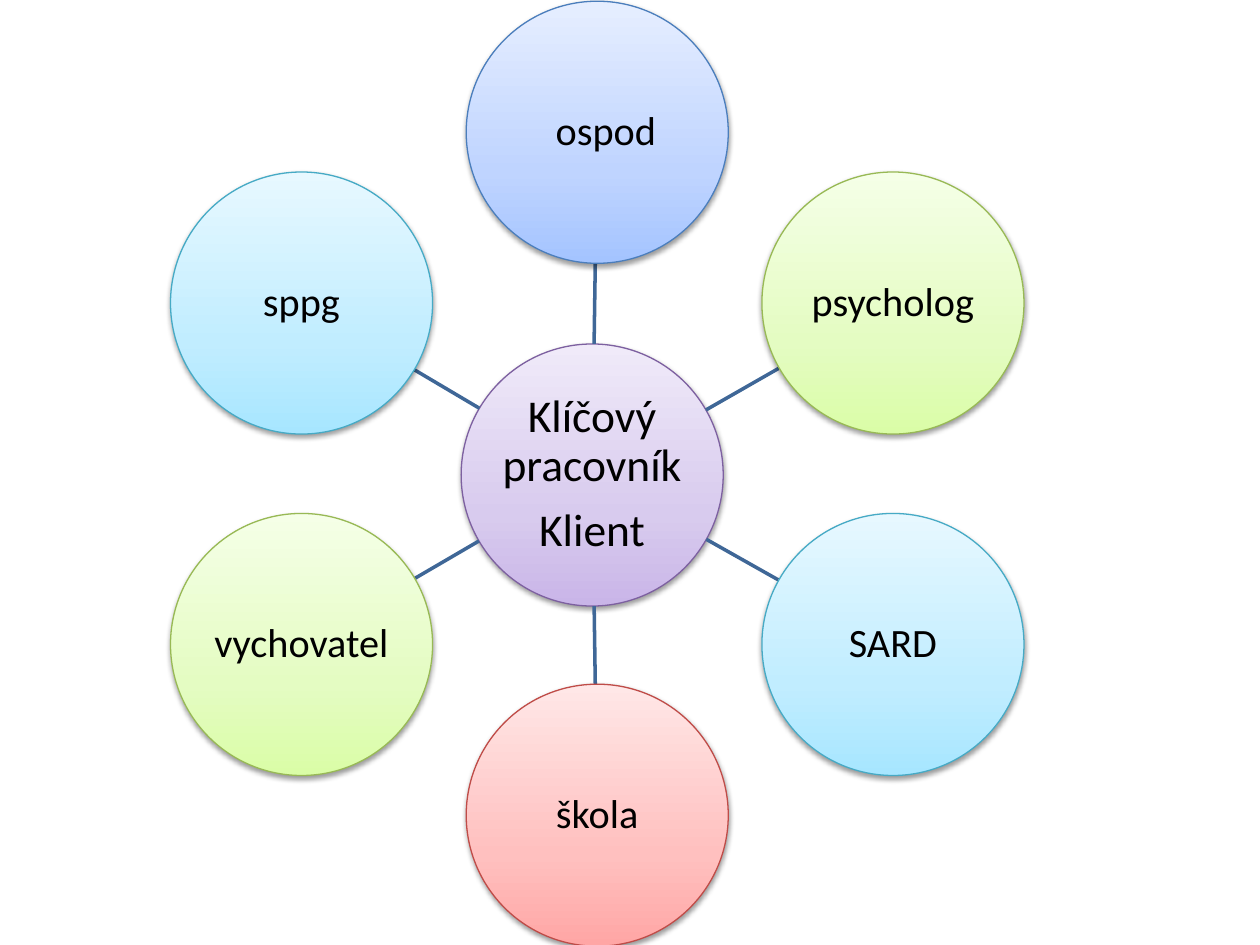
"""Build a hub-and-spoke slide of the people around a key worker and client."""
from copy import deepcopy
from math import cos, hypot, radians, sin

from lxml import etree
from pptx import Presentation
from pptx.dml.color import RGBColor
from pptx.enum.shapes import MSO_CONNECTOR, MSO_SHAPE
from pptx.enum.text import MSO_ANCHOR, PP_ALIGN
from pptx.oxml import parse_xml
from pptx.oxml.ns import qn
from pptx.util import Inches, Pt

BLACK = RGBColor(0x00, 0x00, 0x00)
SPOKE = RGBColor(0x3F, 0x67, 0x97)
PURPLE = [RGBColor.from_string(c) for c in ("C9B5E8", "D8CBEE", "F0EAF9", "7D60A0")]
BLUE = [RGBColor.from_string(c) for c in ("A4C4FF", "BFD4FF", "E6EEFF", "4B7EBC")]
GREEN = [RGBColor.from_string(c) for c in ("DAFDA7", "E4FCC2", "F5FFE7", "98B955")]
AQUA = [RGBColor.from_string(c) for c in ("A7E6FF", "C1EDFF", "E7F8FF", "46AAC5")]
RED = [RGBColor.from_string(c) for c in ("FFA6A5", "FFC0BF", "FFE7E7", "BF4C48")]

RADIUS = 1.04
HUB_X, HUB_Y = 4.70, 3.77
RING_X, RING_Y, RING_RADIUS = 4.74, 3.76, 2.71
SHADOW = (
    '<a:effectLst xmlns:a="http://schemas.openxmlformats.org/drawingml/2006/main">'
    '<a:outerShdw blurRad="39370" dist="20320" dir="5400000" rotWithShape="0">'
    '<a:srgbClr val="000000"><a:alpha val="38000"/></a:srgbClr>'
    '</a:outerShdw></a:effectLst>'
)

deck = Presentation()
deck.slide_width, deck.slide_height = Inches(10), Inches(7.5)
page = deck.slides.add_slide(deck.slide_layouts[6])


def add_circle(text, *, x, y, palette, size=23, left_inset=0.02):
    circle = page.shapes.add_shape(
        MSO_SHAPE.OVAL, Inches(x - RADIUS), Inches(y - RADIUS),
        Inches(2 * RADIUS), Inches(2 * RADIUS))
    circle.fill.gradient()
    circle.fill.gradient_angle = 90
    first_stop = circle.fill._fill._gradFill.find(qn("a:gsLst"))[0]
    first_stop.addnext(deepcopy(first_stop))
    for stop, position, color in zip(circle.fill.gradient_stops, (0, 0.35, 1), palette):
        stop.position = position
        stop.color.rgb = color
    circle.line.color.rgb = palette[3]
    circle.line.width = Pt(0.75)
    circle._element.spPr.append(parse_xml(SHADOW))

    frame = circle.text_frame
    frame.word_wrap = True
    frame.vertical_anchor = MSO_ANCHOR.MIDDLE
    frame.margin_left = Inches(left_inset)
    frame.margin_right = frame.margin_top = frame.margin_bottom = Inches(0.02)
    frame.text = text
    for para in frame.paragraphs:
        para.alignment = PP_ALIGN.CENTER
        para.line_spacing = 0.9
        para.space_after = Pt(9)
        for span in para.runs:
            span.font.name = "Calibri"
            span.font.size = Pt(size)
            span.font.color.rgb = BLACK


add_circle("Klíčový pracovník\nKlient", x=HUB_X, y=HUB_Y, palette=PURPLE, size=26)

partners = [
    ("ospod", BLUE, 0.16),
    ("psycholog", GREEN, 0.02),
    ("SARD", AQUA, 0.02),
    ("škola", RED, 0.02),
    ("vychovatel", GREEN, 0.02),
    ("sppg", AQUA, 0.02),
]
for index, (name, palette, left_inset) in enumerate(partners):
    angle = radians(60 * index - 90)
    x = RING_X + RING_RADIUS * cos(angle)
    y = RING_Y + RING_RADIUS * sin(angle)
    distance = hypot(x - HUB_X, y - HUB_Y)
    step_x = RADIUS * (x - HUB_X) / distance
    step_y = RADIUS * (y - HUB_Y) / distance
    spoke = page.shapes.add_connector(
        MSO_CONNECTOR.STRAIGHT, Inches(HUB_X + step_x), Inches(HUB_Y + step_y),
        Inches(x - step_x), Inches(y - step_y))
    spoke.line.color.rgb = SPOKE
    spoke.line.width = Pt(2)
    etree.SubElement(spoke._element.spPr, qn("a:effectLst"))
    add_circle(name, x=x, y=y, palette=palette, left_inset=left_inset)

deck.save("out.pptx")
